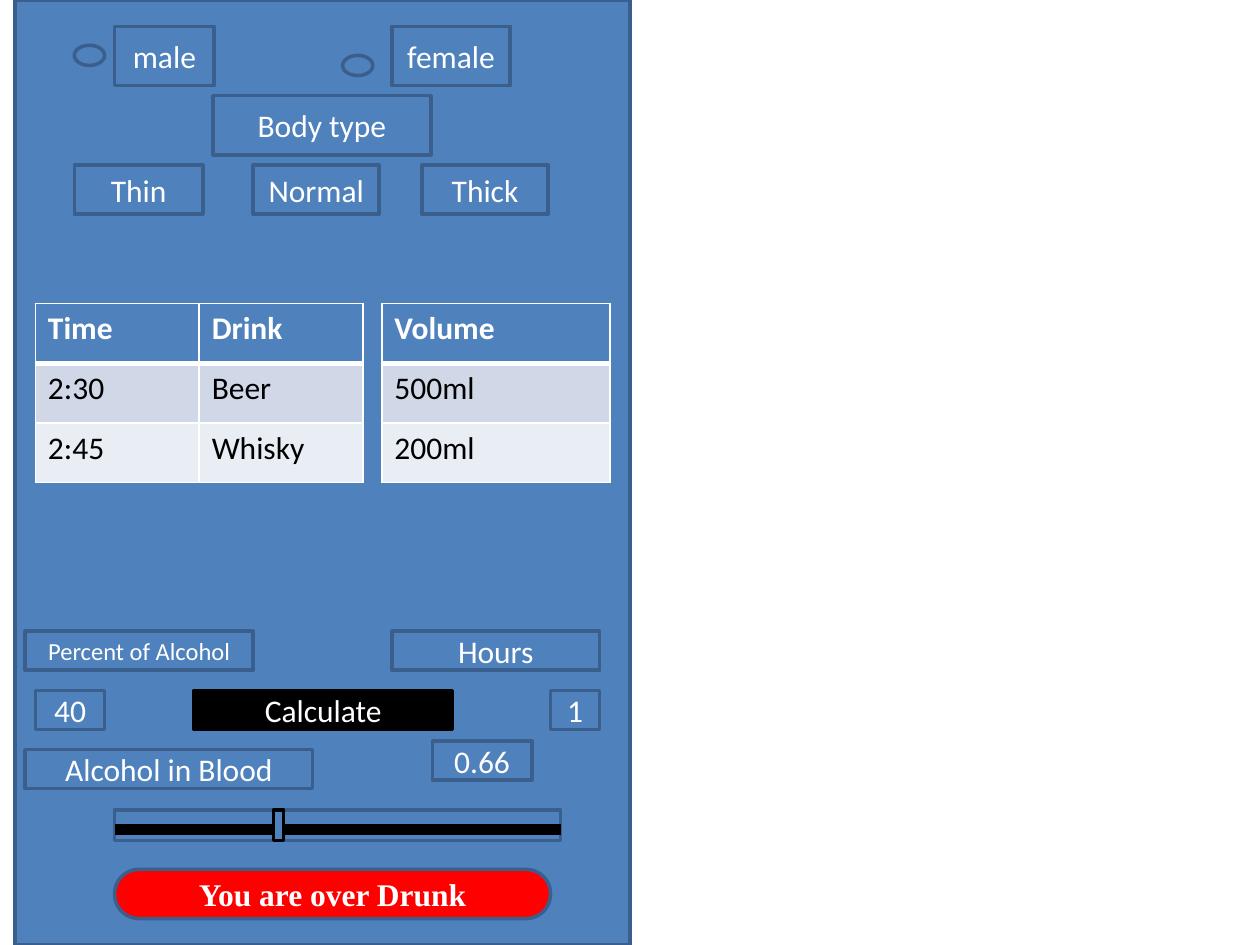
from lxml import etree
from pptx import Presentation
from pptx.dml.color import RGBColor
from pptx.enum.shapes import MSO_CONNECTOR, MSO_SHAPE
from pptx.enum.text import MSO_ANCHOR, PP_ALIGN
from pptx.oxml.ns import qn
from pptx.util import Pt

RECTANGLE = MSO_SHAPE.RECTANGLE
OVAL = MSO_SHAPE.OVAL
PILL = MSO_SHAPE.ROUNDED_RECTANGLE
STRAIGHT = MSO_CONNECTOR.STRAIGHT
CENTER = PP_ALIGN.CENTER
MIDDLE = MSO_ANCHOR.MIDDLE

COLORS = {
    "blue": "4F81BD",
    "outline": "3A5F8C",
    "black": "000000",
    "white": "FFFFFF",
    "red": "FF0000",
    "odd_row": "D0D8E8",
    "even_row": "E9EDF4",
}
FIELD_HEIGHT = 22.3


def color(name):
    return RGBColor.from_string(COLORS[name])


def set_font(para, size, ink, bold=False, face="Calibri"):
    para.font.name = face
    para.font.size = Pt(size)
    para.font.bold = bold
    para.font.color.rgb = color(ink)


def add_block(page, box, text="", kind=RECTANGLE, fill="blue", line="outline",
              size=18, bold=False, face="Calibri"):
    shape = page.shapes.add_shape(kind, *map(Pt, box))
    shape.shadow.inherit = False
    shape.fill.solid()
    shape.fill.fore_color.rgb = color(fill)
    shape.line.color.rgb = color(line)
    shape.line.width = Pt(2)
    if text:
        frame = shape.text_frame
        frame.word_wrap = True
        frame.vertical_anchor = MIDDLE
        para = frame.paragraphs[0]
        para.text = text
        para.alignment = CENTER
        set_font(para, size, "white", bold, face)
    return shape


def add_borders(cell, top, bottom):
    properties = cell._tc.get_or_add_tcPr()
    for tag, width in (("a:lnL", 1), ("a:lnR", 1), ("a:lnT", top), ("a:lnB", bottom)):
        border = etree.SubElement(properties, qn(tag), w=str(Pt(width)))
        solid = etree.SubElement(border, qn("a:solidFill"))
        etree.SubElement(solid, qn("a:srgbClr"), val=COLORS["white"])


def add_table(page, box, rows):
    table = page.shapes.add_table(len(rows), len(rows[0]), *map(Pt, box)).table
    for row_index, row in enumerate(rows):
        header = row_index == 0
        fill = "blue" if header else ("even_row", "odd_row")[row_index % 2]
        for column_index, text in enumerate(row):
            cell = table.cell(row_index, column_index)
            add_borders(cell, 3 if row_index == 1 else 1, 3 if header else 1)
            cell.fill.solid()
            cell.fill.fore_color.rgb = color(fill)
            para = cell.text_frame.paragraphs[0]
            para.text = text
            set_font(para, 18, "white" if header else "black", header)


def add_person(page, box):
    left, top, width, height = box
    for x, y in ((0, 10.8), (153.3, 16.6)):
        add_block(page, (left + x, top + y, 17.3, 11.5), kind=OVAL)
    for text, x, block_width in (("male", 23, 56.9), ("female", 181.4, 67.7)):
        add_block(page, (left + x, top, block_width, 33.8), text)
    add_block(page, (left + 79.2, top + 39.6, 124.6, 33.8), "Body type")
    row_height = 28.1
    for text, x, block_width in (("Thin", 0, 73.4), ("Normal", 102.2, 72),
                                 ("Thick", width - 72, 72)):
        add_block(page, (left + x, top + height - row_height, block_width, row_height), text)


def add_drinks(page, box):
    left, top, width, height = box
    volume_width = 130.3
    add_table(page, (left, top, 187.2, height),
              [("Time", "Drink"), ("2:30", "Beer"), ("2:45", "Whisky")])
    add_table(page, (left + width - volume_width, top, volume_width, height),
              [("Volume",), ("500ml",), ("200ml",)])


def add_calculator(page, box):
    left, top, width, height = box
    hours_width, count_width = 118.8, 28.1
    fields = (
        ("Percent of Alcohol", 0, 0, 130.3, 14),
        ("Hours", width - hours_width, 0, hours_width, 18),
        ("40", 5.8, 33.9, 39.6, 18),
        ("1", width - count_width, 33.9, count_width, 18),
        ("0.66", 232.6, 62.7, 56.9, 18),
        ("Alcohol in Blood", 0, height - FIELD_HEIGHT, 164.2, 18),
    )
    for text, x, y, field_width, size in fields:
        add_block(page, (left + x, top + y, field_width, FIELD_HEIGHT), text, size=size)
    add_block(page, (left + 96.5, top + 33.9, 147.6, FIELD_HEIGHT), "Calculate",
              fill="black", line="black")


def add_verdict(page, box):
    left, top, width, height = box
    track_height = 17.3
    add_block(page, (left, top, width, track_height))
    level = top + 10.8
    bar = page.shapes.add_connector(STRAIGHT, Pt(left), Pt(level), Pt(left + width), Pt(level))
    bar.line.color.rgb = color("black")
    bar.line.width = Pt(6.25)
    etree.SubElement(bar._element.spPr, qn("a:effectLst"))
    add_block(page, (left + 90.7, top, 5.8, track_height), line="black")
    pill_height = 28.1
    pill = add_block(page, (left, top + height - pill_height, 249.1, pill_height),
                     "You are over Drunk", kind=PILL, fill="red", bold=True,
                     face="Times New Roman")
    pill.adjustments[0] = 0.495


def main():
    deck = Presentation()
    deck.slide_width, deck.slide_height = Pt(720), Pt(540)
    page = deck.slides.add_slide(deck.slide_layouts[6])
    add_block(page, (8.64, 0, 351.36, 540))
    add_person(page, (42.5, 15.1, 270.7, 107.3))
    add_drinks(page, (20.2, 173.5, 328.3, 102.2))
    add_calculator(page, (14.4, 360.7, 328.3, 90))
    add_verdict(page, (65.5, 463, 254.9, 61.9))
    deck.save("out.pptx")


if __name__ == "__main__":
    main()
